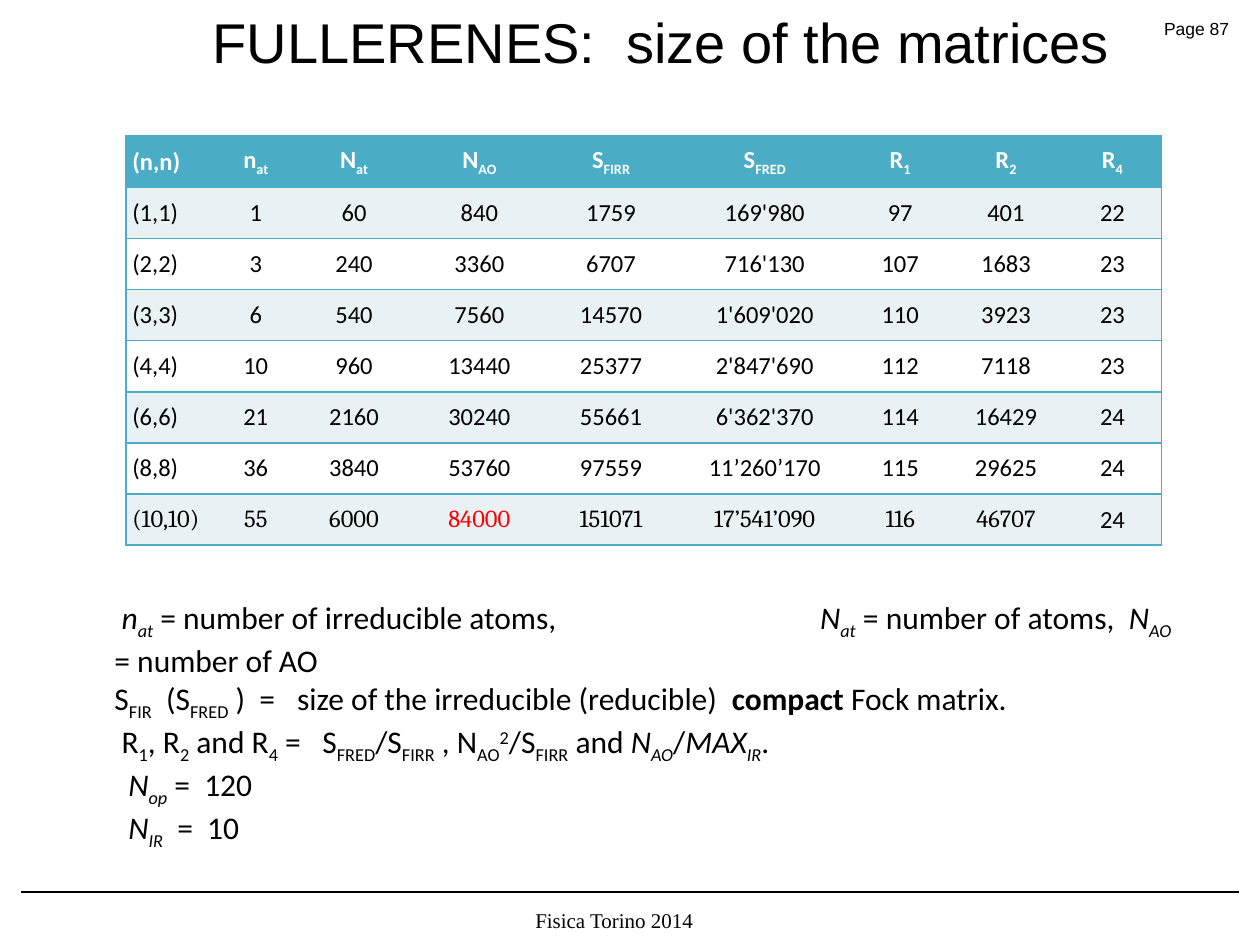
from lxml import etree
from pptx import Presentation
from pptx.dml.color import RGBColor
from pptx.enum.shapes import MSO_CONNECTOR
from pptx.enum.text import MSO_ANCHOR, PP_ALIGN
from pptx.oxml.ns import qn
from pptx.util import Inches, Pt

LEFT, CENTER = PP_ALIGN.LEFT, PP_ALIGN.CENTER
TOP, MIDDLE = MSO_ANCHOR.TOP, MSO_ANCHOR.MIDDLE
STRAIGHT = MSO_CONNECTOR.STRAIGHT
COLORS = {"ink": "000000", "paper": "FFFFFF", "teal": "4BACC6", "band": "E9F1F5", "alert": "FF0000"}
PLAIN_TABLE = "{2D5ABB26-0587-4C30-8999-92F81FD0307C}"
SUB, SUPER = -25, 30

STYLES = {
    "": ({}, 0),
    "i": ({"italic": True}, 0),
    "b": ({"bold": True}, 0),
    "sub": ({}, SUB),
    "isub": ({"italic": True}, SUB),
    "super": ({}, SUPER),
}
COLUMN_WIDTHS = [0.73, 0.6, 0.96, 1.03, 1.06, 1.38, 0.77, 0.91, 0.78]
HEADINGS = [("(n,n)", ""), ("n", "at"), ("N", "at"), ("N", "AO"), ("S", "FIRR"),
            ("S", "FRED"), ("R", "1"), ("R", "2"), ("R", "4")]
FULLERENES = [
    ["(1,1)", "1", "60", "840", "1759", "169'980", "97", "401", "22"],
    ["(2,2)", "3", "240", "3360", "6707", "716'130", "107", "1683", "23"],
    ["(3,3)", "6", "540", "7560", "14570", "1'609'020", "110", "3923", "23"],
    ["(4,4)", "10", "960", "13440", "25377", "2'847'690", "112", "7118", "23"],
    ["(6,6)", "21", "2160", "30240", "55661", "6'362'370", "114", "16429", "24"],
    ["(8,8)", "36", "3840", "53760", "97559", "11’260’170", "115", "29625", "24"],
    ["(10,10)", "55", "6000", "84000", "151071", "17’541’090", "116", "46707", "24"],
]
LEGEND = [
    (None, 5.6, [(" ", ""), ("n", "i"), ("at", "isub"),
                 (" = number of irreducible atoms,\t", ""),
                 ("N", "i"), ("at", "isub"), (" = number of atoms,  ", ""),
                 ("N", "i"), ("AO", "isub"), (" = number of AO", "")]),
    (None, 1.45, [("S", ""), ("FIR", "sub"), ("  (S", ""), ("FRED", "sub"),
                  (" )  =\tsize of the irreducible (reducible)  ", ""),
                  ("compact", "b"), (" Fock matrix.", "")]),
    (None, 1.65, [(" R", ""), ("1", "sub"), (", R", ""), ("2", "sub"), (" and R", ""),
                  ("4", "sub"), (" =\tS", ""), ("FRED", "sub"), ("/S", ""), ("FIRR", "sub"),
                  (" , N", ""), ("AO", "sub"), ("2", "super"), ("/S", ""), ("FIRR", "sub"),
                  (" and ", ""), ("N", "i"), ("AO", "isub"), ("/", ""), ("MAX", "i"),
                  ("IR", "isub"), (".", "")]),
    (0.11, None, [("N", "i"), ("op", "isub"), (" =  120", "")]),
    (0.11, None, [("N", "i"), ("IR", "isub"), ("  =  10", "")]),
]


def add_run(paragraph, text, size, face, color="ink", style="", **extra):
    """Append one formatted run to a paragraph."""
    run = paragraph.add_run()
    run.text = text
    attributes, baseline = STYLES[style]
    for name, value in {"size": Pt(size), "name": face, **attributes, **extra}.items():
        setattr(run.font, name, value)
    run.font.color.rgb = RGBColor.from_string(COLORS[color])
    if baseline:
        run.font._element.set("baseline", f"{baseline}000")


def add_frame(slide, box):
    """Add a wrapping text box and return its text frame."""
    frame = slide.shapes.add_textbox(*map(Inches, box)).text_frame
    for name, value in {"word_wrap": True, "vertical_anchor": TOP}.items():
        setattr(frame, name, value)
    return frame


def add_label(slide, box, text, size, face, align=LEFT):
    """Place a single line of text in a box."""
    paragraph = add_frame(slide, box).paragraphs[0]
    paragraph.alignment = align
    add_run(paragraph, text, size, face)


def add_footer(slide, box):
    """Draw the footer rule along the top of the box, with the event name below."""
    left, top, width, height = box
    rule = slide.shapes.add_connector(
        STRAIGHT, Inches(left), Inches(top), Inches(left + width), Inches(top))
    rule.line.color.rgb = RGBColor.from_string(COLORS["ink"])
    rule.line.width = Pt(0.75)
    etree.SubElement(rule._element.spPr, qn("a:effectLst"))
    add_label(slide, (left + 2.58, top + 0.07, 4.25, height - 0.07),
              "Fisica Torino 2014", 12, "Times New Roman", CENTER)


def style_cell(cell, fill, sides):
    """Set a cell's margins, borders and fill."""
    for name, value in {"margin_left": Inches(0.05), "margin_right": Inches(0.05),
                        "margin_top": 0, "margin_bottom": 0,
                        "vertical_anchor": MIDDLE}.items():
        setattr(cell, name, value)
    properties = cell._tc.get_or_add_tcPr()
    for side in sides:
        border = etree.SubElement(properties, qn(f"a:ln{side}"), w=str(Pt(1)))
        solid = etree.SubElement(border, qn("a:solidFill"))
        etree.SubElement(solid, qn("a:srgbClr"), val=COLORS["teal"])
    cell.fill.solid()
    cell.fill.fore_color.rgb = RGBColor.from_string(COLORS[fill])


def add_matrix_table(slide, box):
    """Place the table of matrix sizes in the box."""
    row_count, column_count = len(FULLERENES) + 1, len(HEADINGS)
    table = slide.shapes.add_table(row_count, column_count, *map(Inches, box)).table
    table._tbl.tblPr.find(qn("a:tableStyleId")).text = PLAIN_TABLE
    for column, width in zip(table.columns, COLUMN_WIDTHS):
        column.width = Inches(width)
    for r in range(row_count):
        fill = "teal" if r == 0 else "band" if r % 2 else "paper"
        for c in range(column_count):
            cell = table.cell(r, c)
            sides = ["L"] * (c == 0) + ["R"] * (c == column_count - 1) + ["T", "B"]
            style_cell(cell, fill, sides)
            paragraph = cell.text_frame.paragraphs[0]
            paragraph.alignment = CENTER if c else LEFT
            if r == 0:
                symbol, index = HEADINGS[c]
                add_run(paragraph, symbol, 14, "Calibri", "paper", bold=True)
                if index:
                    add_run(paragraph, index, 14, "Calibri", "paper", "sub", bold=True)
            else:
                value = FULLERENES[r - 1][c]
                last_row = r == row_count - 1 and c < column_count - 1
                add_run(paragraph, value, 14, "Cambria" if last_row else "Calibri",
                        "alert" if value == "84000" else "ink")


def add_legend(slide, box):
    """Explain the table symbols, one paragraph each."""
    frame = add_frame(slide, box)
    for number, (indent, tab, runs) in enumerate(LEGEND):
        paragraph = frame.add_paragraph() if number else frame.paragraphs[0]
        properties = paragraph._p.get_or_add_pPr()
        if indent:
            properties.set("marL", str(Inches(indent)))
            properties.set("indent", "0")
        if tab:
            stops = etree.SubElement(properties, qn("a:tabLst"))
            etree.SubElement(stops, qn("a:tab"), pos=str(Inches(tab)), algn="l")
        for text, style in runs:
            add_run(paragraph, text, 18, "Calibri", style=style)


def main():
    """Build the slide and save it."""
    deck = Presentation()
    deck.slide_width, deck.slide_height = Inches(10), Inches(7.5)
    slide = deck.slides.add_slide(deck.slide_layouts[6])
    add_footer(slide, (0.17, 7.08, 9.66, 0.37))
    add_label(slide, (9.14, 0.09, 0.83, 0.27), "Page 87", 10, "Arial")
    add_label(slide, (0.5, 0.01, 9.5, 0.74), "FULLERENES:  size of the matrices",
              32, "Arial", CENTER)
    add_matrix_table(slide, (1, 1.08, 8.22, 3.25))
    add_legend(slide, (0.81, 4.7, 8.68, 2.2))
    deck.save("out.pptx")


if __name__ == "__main__":
    main()
